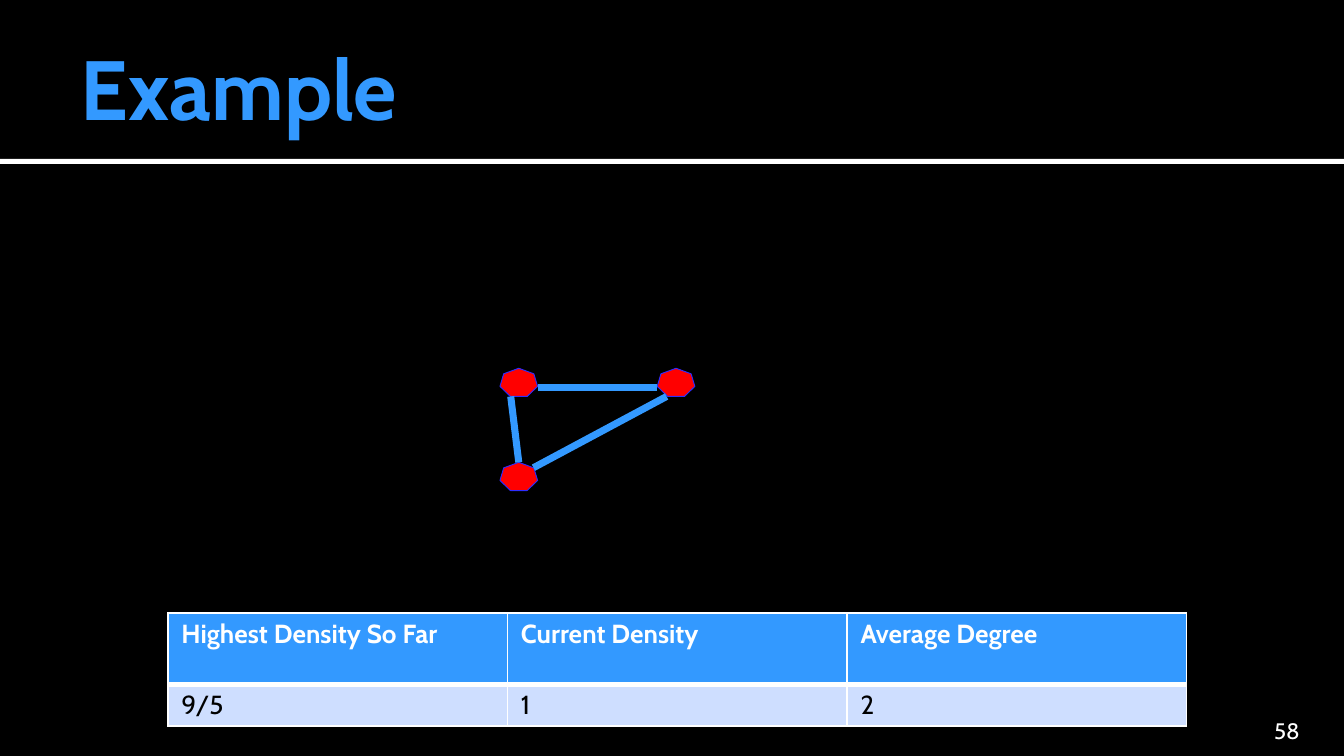
from lxml import etree
from pptx import Presentation
from pptx.dml.color import RGBColor
from pptx.enum.shapes import MSO_CONNECTOR, MSO_SHAPE
from pptx.enum.text import MSO_ANCHOR, PP_ALIGN
from pptx.oxml.ns import qn
from pptx.util import Inches, Pt

RECTANGLE = MSO_SHAPE.RECTANGLE
HEPTAGON = MSO_SHAPE.HEPTAGON
STRAIGHT = MSO_CONNECTOR.STRAIGHT
LEFT = PP_ALIGN.LEFT
RIGHT = PP_ALIGN.RIGHT
MIDDLE = MSO_ANCHOR.MIDDLE
BOTTOM = MSO_ANCHOR.BOTTOM

FONT = "Cabin"
COLORS = {
    "black": "000000",
    "white": "FFFFFF",
    "accent": "3399FF",
    "node": "FF0000",
    "node_edge": "2D2DFE",
    "row": "CEDEFF",
}
NODES = [(3.72, 2.74), (3.72, 3.44), (4.89, 2.74)]
EDGES = [
    ((4, 2.88), (4.89, 2.88)),
    ((3.8, 2.95), (3.86, 3.44)),
    ((3.97, 3.48), (4.96, 2.95)),
]
DENSITIES = [
    ("Highest Density So Far", "Current Density", "Average Degree"),
    ("9/5", "1", "2"),
]
ROW_HEIGHTS = (0.53, 0.3)


def color(name):
    return RGBColor.from_string(COLORS[name])


def inches(*lengths):
    return [Inches(length) for length in lengths]


def write(frame, text, size, color_name, bold=False, align=LEFT):
    paragraph = frame.paragraphs[0]
    paragraph.alignment = align
    run = paragraph.add_run()
    run.text = text
    run.font.name = FONT
    run.font.size = Pt(size)
    run.font.bold = bold
    run.font.color.rgb = color(color_name)


def set_margins(holder, left, top, right, bottom):
    holder.margin_left, holder.margin_top = inches(left, top)
    holder.margin_right, holder.margin_bottom = inches(right, bottom)


def add_title(slide, text):
    title = slide.shapes.title
    title.left, title.top, title.width, title.height = inches(0.5, 0.13, 9, 1.03)
    title.text_frame.vertical_anchor = MIDDLE
    set_margins(title.text_frame, 0.1, 0.05, 0.05, 0.05)
    write(title.text_frame, text, 45, "accent", bold=True)


def add_slide_number(slide, number):
    frame = slide.shapes.add_textbox(*inches(8.97, 5.31, 0.8, 0.23)).text_frame
    frame.word_wrap = True
    frame.vertical_anchor = BOTTOM
    set_margins(frame, 0.1, 0.05, 0.1, 0)
    write(frame, number, 12, "white", align=RIGHT)


def add_filled(slide, preset, box, fill, outline=None):
    shape = slide.shapes.add_shape(preset, *inches(*box))
    shape.shadow.inherit = False
    shape.fill.solid()
    shape.fill.fore_color.rgb = color(fill)
    if outline:
        shape.line.color.rgb = color(outline)
        shape.line.width = Pt(0.5)
    else:
        shape.line.fill.background()


def add_edge(slide, start, end):
    edge = slide.shapes.add_connector(STRAIGHT, *inches(*start, *end))
    edge.line.color.rgb = color("accent")
    edge.line.width = Pt(3.78)
    etree.SubElement(edge._element.spPr, qn("a:effectLst"))


def set_borders(cell, **widths):
    properties = cell._tc.get_or_add_tcPr()
    for position, side in enumerate("LRTB"):
        border = etree.Element(qn(f"a:ln{side}"), w=str(Pt(widths.get(side, 1))))
        fill = etree.SubElement(border, qn("a:solidFill"))
        etree.SubElement(fill, qn("a:srgbClr"), val=COLORS["white"])
        properties.insert(position, border)


def add_density_table(slide):
    box = inches(1.25, 4.56, 7.58, sum(ROW_HEIGHTS))
    table = slide.shapes.add_table(len(DENSITIES), len(DENSITIES[0]), *box).table
    for row_index, values in enumerate(DENSITIES):
        table.rows[row_index].height = Inches(ROW_HEIGHTS[row_index])
        header = row_index == 0
        for column_index, value in enumerate(values):
            cell = table.cell(row_index, column_index)
            set_margins(cell, 0.1, 0.04, 0.1, 0.04)
            cell.fill.solid()
            cell.fill.fore_color.rgb = color("accent" if header else "row")
            write(cell.text_frame, value, 14, "white" if header else "black", header)
            set_borders(cell, **{"B" if header else "T": 3})


def main():
    presentation = Presentation()
    presentation.slide_width = Inches(10)
    presentation.slide_height = presentation.slide_width * 9 // 16
    slide = presentation.slides.add_slide(presentation.slide_layouts[5])
    slide.background.fill.solid()
    slide.background.fill.fore_color.rgb = color("black")

    add_filled(slide, RECTANGLE, (0, 1.18, 10, 0.04), "white")
    add_filled(slide, RECTANGLE, (0, 0, 10, 1.18), "black")
    add_title(slide, "Example")
    title = slide.shapes.title._element
    title.getparent().append(title)
    add_slide_number(slide, "58")
    for left, top in NODES:
        add_filled(slide, HEPTAGON, (left, top, 0.28, 0.21), "node", "node_edge")
    for start, end in EDGES:
        add_edge(slide, start, end)
    add_density_table(slide)

    presentation.save("out.pptx")


if __name__ == "__main__":
    main()
